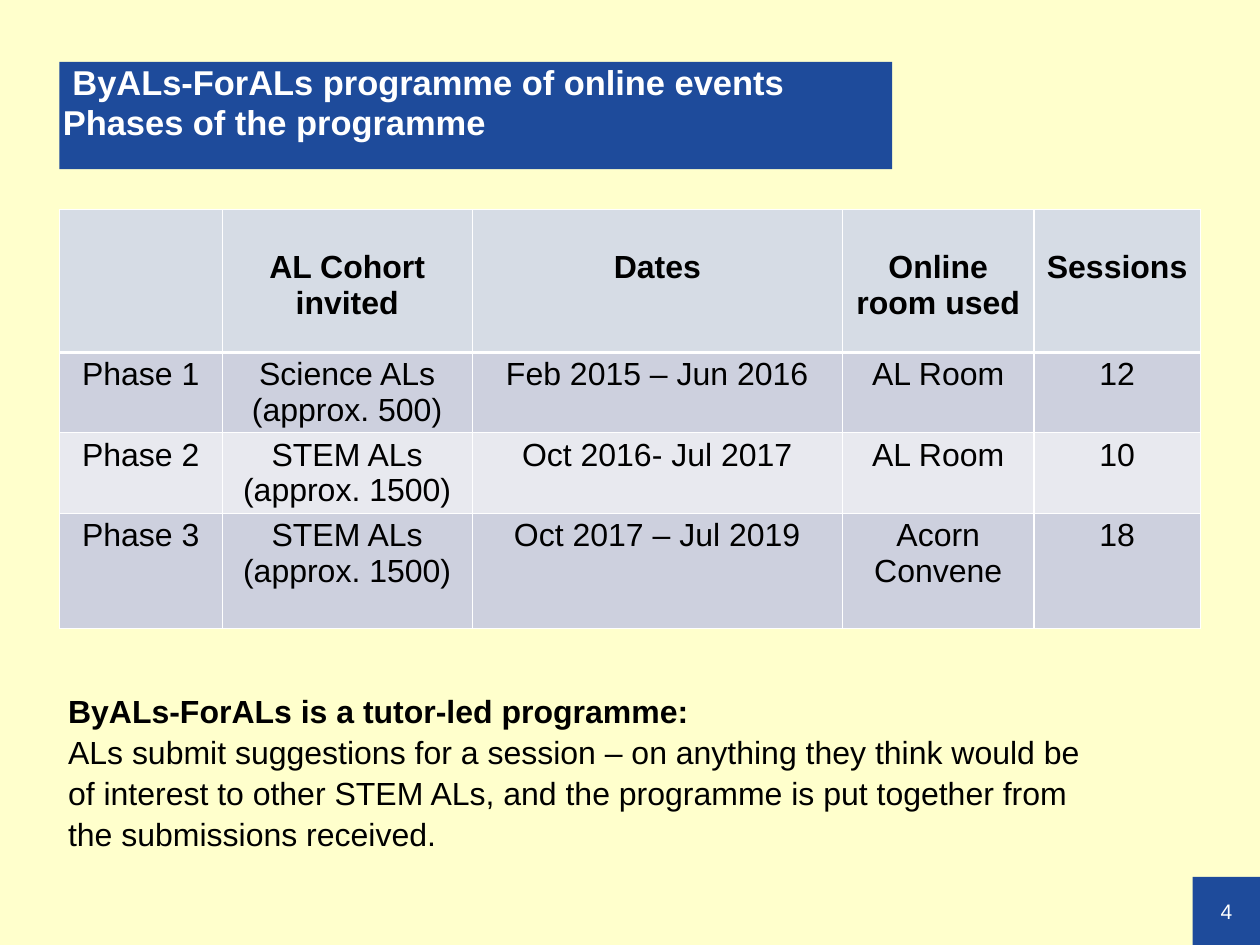
from dataclasses import dataclass

from lxml.etree import SubElement
from pptx import Presentation
from pptx.dml.color import RGBColor
from pptx.enum.shapes import MSO_SHAPE as Shape
from pptx.enum.text import MSO_ANCHOR as Anchor, MSO_AUTO_SIZE as Auto, PP_ALIGN as Align
from pptx.oxml.ns import qn
from pptx.util import Inches, Pt

WIDE, HIGH = Inches(14.22), Inches(10.67)
HUES = {
    "page": "FFFFCC", "blue": "1E4B9B", "white": "FFFFFF", "black": "000000",
    "head": "D6DCE5", "odd": "CDD0DE", "even": "E8E9EF",
}
LEFT = 4.71


@dataclass
class Box:
    """A frame in hundredths of the slide's width and height."""
    x: float
    y: float
    w: float
    h: float

    def frame(self) -> dict[str, int]:
        return {"left": across(self.x), "top": down(self.y),
                "width": across(self.w), "height": down(self.h)}


@dataclass
class Style:
    size: float
    hue: str = "black"
    bold: bool = False
    align: Align = Align.LEFT
    space: float = 1.0


@dataclass
class Row:
    high: float
    hue: str
    cells: list[str]


TITLE = Style(28, "white", True, space=0.97)
HEAD = Style(26, bold=True, align=Align.CENTER)
CELL = Style(26, align=Align.CENTER)
LEAD = Style(26, bold=True, space=1.07)
BODY = Style(26, space=1.07)
PAGE = Style(17.1, "white", align=Align.CENTER)

COLS = [12.94, 19.83, 29.4, 15.19, 13.22]
ROWS = [
    Row(15.09, "head", ["", "AL Cohort invited", "Dates", "Online room used", "Sessions"]),
    Row(8.5, "odd", ["Phase 1", "Science ALs\n(approx. 500)", "Feb 2015 – Jun 2016", "AL Room", "12"]),
    Row(8.5, "even", ["Phase 2", "STEM ALs\n(approx. 1500)", "Oct 2016- Jul 2017", "AL Room", "10"]),
    Row(12.2, "odd", ["Phase 3", "STEM ALs\n(approx. 1500)", "Oct 2017 – Jul 2019", "Acorn Convene", "18"]),
]


def across(share: float) -> int:
    return round(WIDE * share / 100)


def down(share: float) -> int:
    return round(HIGH * share / 100)


def apply(item, values: dict) -> None:
    for name, value in values.items():
        setattr(item, name, value)


def tint(fill, hue: str) -> None:
    fill.solid()
    fill.fore_color.rgb = RGBColor.from_string(HUES[hue])


def write(frame, text: str, *styles: Style) -> None:
    """Fill a text frame; the last style serves all remaining paragraphs."""
    frame.text = text
    for i, para in enumerate(frame.paragraphs):
        style = styles[min(i, len(styles) - 1)]
        apply(para, {"alignment": style.align, "line_spacing": style.space,
                     "space_before": Pt(0), "space_after": Pt(0)})
        for font in [para.font] + [run.font for run in para.runs]:
            apply(font, {"name": "Arial", "size": Pt(style.size), "bold": style.bold})
            font.color.rgb = RGBColor.from_string(HUES[style.hue])


def edge(cell, side: str, width: float) -> None:
    line = SubElement(cell._tc.get_or_add_tcPr(), qn(f"a:ln{side}"), w=str(Pt(width)))
    SubElement(SubElement(line, qn("a:solidFill")), qn("a:srgbClr"), val=HUES["white"])


def add_title(slide) -> None:
    title = slide.shapes.title
    apply(title, Box(LEFT, 6.56, 66.1, 11.34).frame())
    tint(title.fill, "blue")
    frame = title.text_frame
    apply(frame, {"word_wrap": True, "auto_size": Auto.NONE, "vertical_anchor": Anchor.TOP,
                  "margin_left": Inches(0.04), "margin_top": Inches(0.02),
                  "margin_right": 0, "margin_bottom": 0})
    write(frame, " ByALs-ForALs programme of online events\vPhases of the programme", TITLE)


def add_phases(slide) -> None:
    box = Box(LEFT, 22.21, sum(COLS), sum(row.high for row in ROWS))
    table = slide.shapes.add_table(len(ROWS), len(COLS), **box.frame()).table
    table.horz_banding = False
    for col, share in zip(table.columns, COLS):
        col.width = across(share)
    for r, row in enumerate(ROWS):
        table.rows[r].height = down(row.high)
        for c, text in enumerate(row.cells):
            cell = table.cell(r, c)
            widths = {"L": 1, "R": 1, "T": 3 if r == 1 else 1, "B": 3 if r == 0 else 1}
            for side, width in widths.items():
                edge(cell, side, width)
            tint(cell.fill, row.hue)
            if r == 0:
                cell.margin_top = Inches(0.45)
            write(cell.text_frame, text, CELL if r else HEAD)


def add_note(slide) -> None:
    frame = slide.shapes.add_textbox(**Box(LEFT, 72.45, 83.9, 17.34).frame()).text_frame
    frame.word_wrap = True
    write(frame, "ByALs-ForALs is a tutor-led programme:\n"
          "ALs submit suggestions for a session – on anything they think would be "
          "of interest to other STEM ALs, and the programme is put together from "
          "the submissions received.", LEAD, BODY)


def add_badge(slide) -> None:
    badge = slide.shapes.add_shape(Shape.RECTANGLE, **Box(94.66, 92.78, 5.34, 7.22).frame())
    badge.shadow.inherit = False
    tint(badge.fill, "blue")
    badge.line.fill.background()
    frame = badge.text_frame
    apply(frame, {"vertical_anchor": Anchor.MIDDLE, "margin_left": 0, "margin_top": 0,
                  "margin_right": 0, "margin_bottom": 0})
    write(frame, "4", PAGE)


def main() -> None:
    deck = Presentation()
    apply(deck, {"slide_width": WIDE, "slide_height": HIGH})
    slide = deck.slides.add_slide(deck.slide_layouts[5])
    tint(slide.background.fill, "page")
    for add in (add_badge, add_title, add_phases, add_note):
        add(slide)
    deck.save("out.pptx")


if __name__ == "__main__":
    main()
